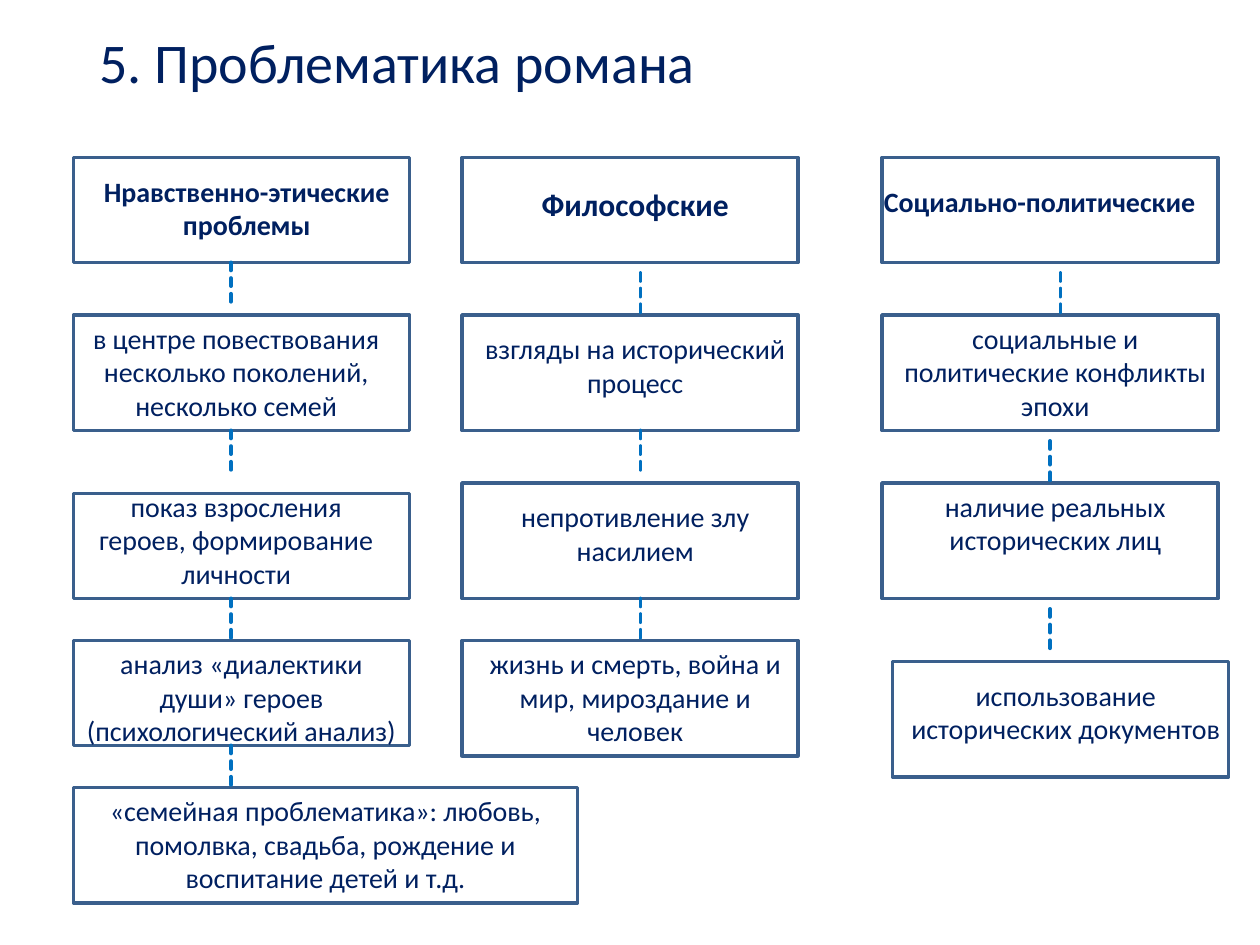
import pptx
import pptx.util
import pptx.dml.color
import pptx.enum.dml
import pptx.enum.shapes
import pptx.enum.text
import pptx.oxml.ns
import lxml.etree

PX = 7620  # 120 px to the inch
NAVY, BORDER, DASH, WHITE = "002060", "3A5F8C", "0070C0", "FFFFFF"
ALIGN = pptx.enum.text.PP_ALIGN


def color(value):
    return pptx.dml.color.RGBColor.from_string(value)


def write(box, text, size=16, bold=False, align=ALIGN.CENTER, wrap=True):
    frame = box.text_frame
    frame.word_wrap = wrap
    frame.vertical_anchor = pptx.enum.text.MSO_ANCHOR.TOP
    frame.auto_size = pptx.enum.text.MSO_AUTO_SIZE.SHAPE_TO_FIT_TEXT
    frame.text = text
    for para in frame.paragraphs:
        para.alignment = align
        para.font.name = "Calibri"
        para.font.size = pptx.util.Pt(size)
        para.font.bold = bold
        para.font.color.rgb = color(NAVY)


deck = pptx.Presentation()
deck.slide_width, deck.slide_height = 1200 * PX, 900 * PX
page = deck.slides.add_slide(deck.slide_layouts[5])

# Title
title = page.shapes.title
title.left, title.top, title.width, title.height = 76 * PX, 20 * PX, 605 * PX, 77 * PX
write(title, "5. Проблематика романа", size=32, wrap=False)

# Frames: left, top, width, height; text: shift right, shift down, width, height
heading = {"bold": True}
cards = [
    # Moral and ethical problems
    ((70, 150, 320, 100), (0, 10, 330, 77), "Нравственно-этические\nпроблемы", heading),
    ((70, 300, 320, 110), (0, 0, 310, 110),
     "в центре повествования несколько поколений, несколько семей", {}),
    ((70, 470, 320, 100), (5, -10, 300, 110),
     "показ взросления героев, формирование личности", {}),
    ((70, 610, 320, 100), (0, 0, 320, 110),
     "анализ «диалектики души» героев (психологический анализ)", {}),
    ((70, 750, 480, 110), (10, 0, 460, 110),
     "«семейная проблематика»: любовь, помолвка, свадьба, рождение и "
     "воспитание детей и т.д.", {}),
    # Philosophical problems
    ((440, 150, 320, 100), (0, 20, 330, 48), "Философские", {"bold": True, "size": 18}),
    ((440, 300, 320, 110), (0, 10, 330, 77), "взгляды на исторический процесс", {}),
    ((440, 460, 320, 110), (0, 10, 330, 77), "непротивление злу насилием", {}),
    ((440, 610, 320, 110), (0, 0, 330, 110),
     "жизнь и смерть, война и мир, мироздание и человек", {}),
    # Social and political problems
    ((840, 150, 320, 100), (-10, 20, 340, 44), "Социально-политические",
     {"bold": True, "align": ALIGN.LEFT}),
    ((840, 300, 320, 110), (0, 0, 330, 110), "социальные и политические конфликты эпохи", {}),
    ((840, 460, 320, 110), (0, 0, 330, 77), "наличие реальных исторических лиц", {}),
    ((850, 630, 320, 110), (0, 10, 330, 77), "использование исторических документов", {}),
]
for (left, top, width, height), (right, down, text_width, text_height), text, style in cards:
    frame = page.shapes.add_shape(pptx.enum.shapes.MSO_SHAPE.RECTANGLE,
                                  left * PX, top * PX, width * PX, height * PX)
    frame.shadow.inherit = False
    frame.fill.solid()
    frame.fill.fore_color.rgb = color(WHITE)
    frame.line.color.rgb = color(BORDER)
    frame.line.width = pptx.util.Pt(2)
    label = page.shapes.add_textbox((left + right) * PX, (top + down) * PX,
                                    text_width * PX, text_height * PX)
    write(label, text, **style)

# Dashed links between the frames
links = {220: (250, 410, 570, 710), 610: (260, 410, 570), 1010: (260,), 1000: (420, 580)}
for x, tops in links.items():
    for top in tops:
        link = page.shapes.add_connector(pptx.enum.shapes.MSO_CONNECTOR.STRAIGHT,
                                         x * PX, top * PX, x * PX, (top + 40) * PX)
        link.line.color.rgb = color(DASH)
        link.line.width = pptx.util.Pt(2.25)
        link.line.dash_style = pptx.enum.dml.MSO_LINE.SQUARE_DOT
        link.get_or_add_ln().set("cap", "rnd")
        lxml.etree.SubElement(link._element.spPr, pptx.oxml.ns.qn("a:effectLst"))

deck.save("out.pptx")
